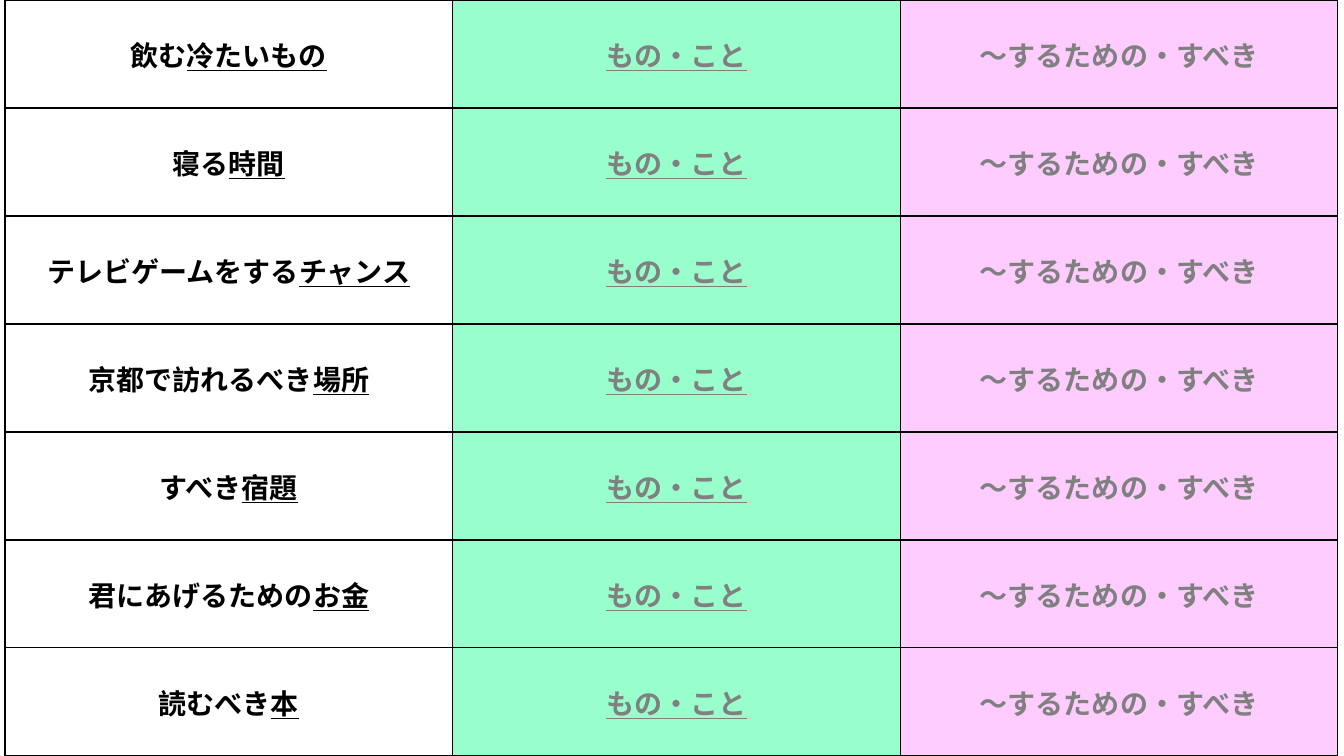
from dataclasses import dataclass

from lxml.etree import SubElement
from pptx import Presentation
from pptx.dml.color import RGBColor
from pptx.enum.text import MSO_ANCHOR, PP_ALIGN
from pptx.oxml.ns import qn
from pptx.util import Inches, Pt


@dataclass(frozen=True)
class Theme:
    font: str = "Noto Sans CJK JP"
    size: int = 20
    ink: str = "000000"
    hint: str = "808080"
    phrase_fill: str = "FFFFFF"
    noun_fill: str = "98FECC"
    modifier_fill: str = "FECCFF"
    border: str = "000000"
    border_width: int = 1


# Each phrase: modifier, then the noun it modifies
PHRASES = [
    ("飲む", "冷たいもの"),
    ("寝る", "時間"),
    ("テレビゲームをする", "チャンス"),
    ("京都で訪れるべき", "場所"),
    ("すべき", "宿題"),
    ("君にあげるための", "お金"),
    ("読むべき", "本"),
]
NOUN_HINT = "もの・こと"
MODIFIER_HINT = "～するための・すべき"
COLUMN_WIDTHS = [4.44, 4.44, 4.34]
SLIDE_WIDTH, SLIDE_HEIGHT = 13.33, 7.5


class SlideBuilder:
    def __init__(self, slide, theme):
        self.slide = slide
        self.theme = theme

    def add_table(self, left, top, widths, height, row_count):
        frame = self.slide.shapes.add_table(
            row_count, len(widths), Inches(left), Inches(top),
            Inches(sum(widths)), Inches(height))
        table = frame.table
        for column, width in zip(table.columns, widths):
            column.width = Inches(width)
        for row in table.rows:
            row.height = Inches(height / row_count)
        return table

    def fill_cell(self, cell, runs, fill, color):
        """Write (text, underlined) runs into a coloured, bordered cell."""
        cell.fill.solid()
        cell.fill.fore_color.rgb = RGBColor.from_string(fill)
        cell.vertical_anchor = MSO_ANCHOR.MIDDLE
        paragraph = cell.text_frame.paragraphs[0]
        paragraph.alignment = PP_ALIGN.CENTER
        for text, underlined in runs:
            self.add_run(paragraph, text, underlined, color)
        self.add_borders(cell)

    def add_run(self, paragraph, text, underlined, color):
        run = paragraph.add_run()
        run.text = text
        formats = {"name": self.theme.font, "size": Pt(self.theme.size),
                   "bold": True, "underline": underlined}
        for name, value in formats.items():
            setattr(run.font, name, value)
        run.font.color.rgb = RGBColor.from_string(color)
        # Japanese glyphs use the East Asian typeface
        SubElement(run.font._element, qn("a:ea"), typeface=self.theme.font)

    def add_borders(self, cell):
        properties = cell._tc.get_or_add_tcPr()
        for index, side in enumerate(("lnL", "lnR", "lnT", "lnB")):
            line = properties.makeelement(
                qn(f"a:{side}"), {"w": str(Pt(self.theme.border_width))})
            solid = SubElement(line, qn("a:solidFill"))
            SubElement(solid, qn("a:srgbClr"), val=self.theme.border)
            properties.insert(index, line)  # borders come before the fill


def main():
    presentation = Presentation()
    presentation.slide_width = Inches(SLIDE_WIDTH)
    presentation.slide_height = Inches(SLIDE_HEIGHT)
    slide = presentation.slides.add_slide(presentation.slide_layouts[6])
    theme = Theme()
    builder = SlideBuilder(slide, theme)

    # Phrase table
    table = builder.add_table(0.05, 0, COLUMN_WIDTHS, SLIDE_HEIGHT, len(PHRASES))
    for row, (modifier, noun) in zip(table.rows, PHRASES):
        columns = [
            ([(modifier, False), (noun, True)], theme.phrase_fill, theme.ink),
            ([(NOUN_HINT, True)], theme.noun_fill, theme.hint),
            ([(MODIFIER_HINT, False)], theme.modifier_fill, theme.hint),
        ]
        for cell, (runs, fill, color) in zip(row.cells, columns):
            builder.fill_cell(cell, runs, fill, color)

    presentation.save("out.pptx")


if __name__ == "__main__":
    main()
